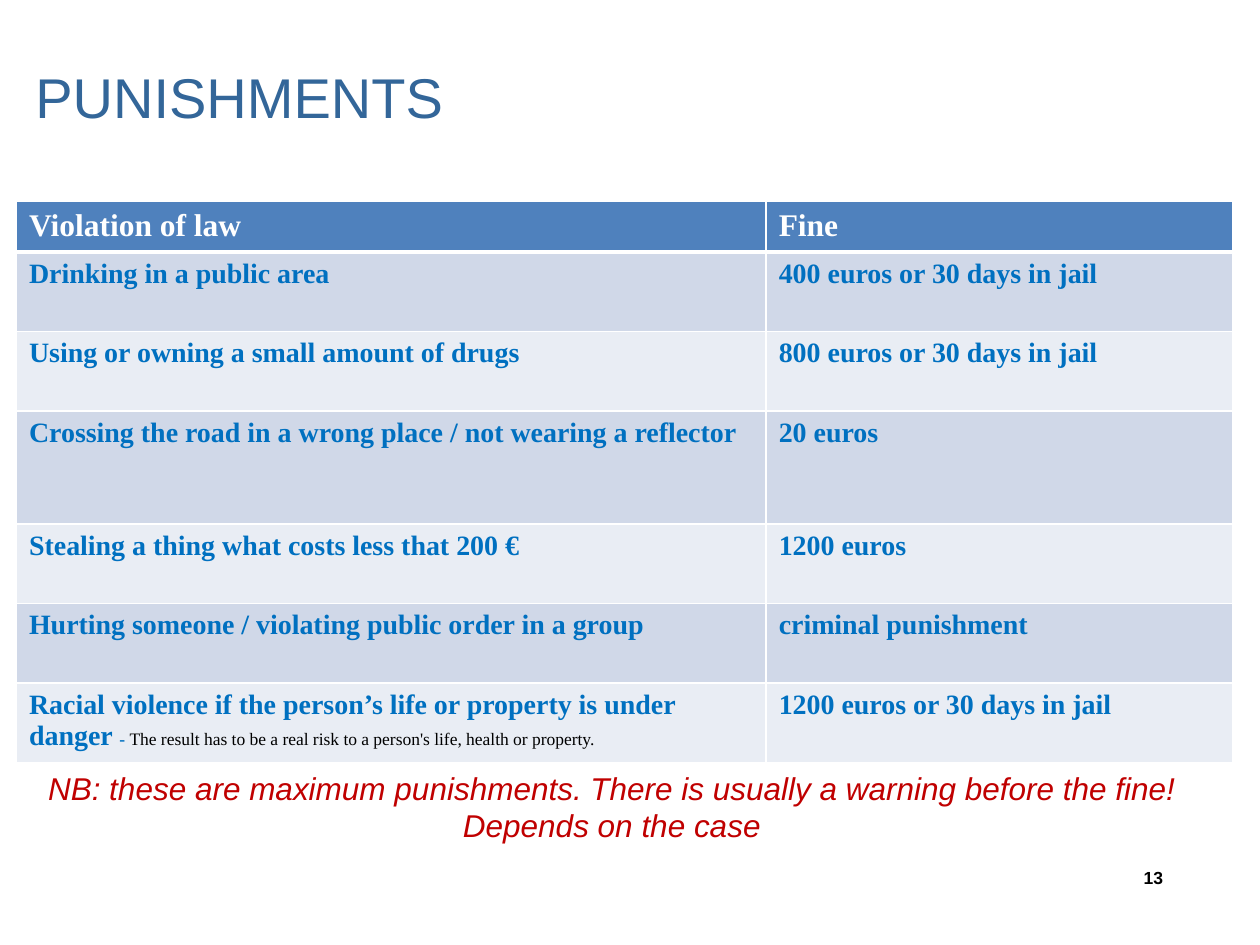
"""Build a slide listing punishments for violations of law."""
from dataclasses import dataclass
from typing import Optional

import pptx
import pptx.dml.color
import pptx.enum.text
import pptx.oxml
import pptx.oxml.ns
import pptx.util

Pt = pptx.util.Pt
ALIGN = pptx.enum.text.PP_ALIGN
ANCHOR = pptx.enum.text.MSO_ANCHOR

WHITE, BLACK, BLUE, RED = "FFFFFF", "000000", "0070C0", "C00000"
TITLE_BLUE, HEADER_FILL = "336699", "4F81BD"
BAND_FILLS = ("D0D8E8", "E9EDF4")
SERIF, SANS = "Times New Roman", "Arial"
COLUMN_WIDTHS = (428.4, 266.4)


@dataclass
class Run:
    text: str
    size: float = 16
    color: str = BLUE
    font: str = SERIF
    bold: bool = True
    italic: bool = False


@dataclass
class Row:
    violation: list[Run]
    fine: list[Run]
    height: float = 45.36


@dataclass
class Box:
    left: float
    top: float
    width: float
    height: float


ROWS = [
    Row([Run("Violation of law", 18, WHITE)], [Run("Fine", 18, WHITE)], 28.8),
    Row([Run("Drinking in a public area")], [Run("400 euros or 30 days in jail")]),
    Row([Run("Using or owning a small amount of drugs")],
        [Run("800 euros or 30 days in jail")]),
    Row([Run("Crossing the road in a wrong place / not wearing a reflector")],
        [Run("20 euros")], 64.8),
    Row([Run("Stealing a thing what costs less that 200 €")], [Run("1200 euros")]),
    Row([Run("Hurting someone / violating public order in a group")],
        [Run("criminal punishment")]),
    Row([Run("Racial violence if the person’s life or property is under danger "),
         Run("- ", 10),
         Run("The result has to be a real risk to a person's life, health or property.",
             10, BLACK, bold=False)],
        [Run("1200 euros or 30 days in jail")]),
]


def rgb(color: str) -> pptx.dml.color.RGBColor:
    return pptx.dml.color.RGBColor.from_string(color)


def write(text_frame, runs: list[Run], alignment: Optional[ALIGN] = ALIGN.LEFT) -> None:
    paragraph = text_frame.paragraphs[0]
    paragraph.alignment = alignment
    for item in runs:
        run = paragraph.add_run()
        run.text = item.text
        run.font.size = Pt(item.size)
        run.font.name = item.font
        run.font.bold = item.bold
        run.font.italic = item.italic
        run.font.color.rgb = rgb(item.color)


def place(shape, box: Box) -> None:
    shape.left, shape.top = Pt(box.left), Pt(box.top)
    shape.width, shape.height = Pt(box.width), Pt(box.height)


def add_text(slide, box: Box, run: Run, alignment: ALIGN) -> None:
    shape = slide.shapes.add_textbox(
        Pt(box.left), Pt(box.top), Pt(box.width), Pt(box.height))
    shape.text_frame.word_wrap = True
    write(shape.text_frame, [run], alignment)


def set_borders(cell, top: float, bottom: float) -> None:
    properties = cell._tc.get_or_add_tcPr()
    for side, width in (("L", 1), ("R", 1), ("T", top), ("B", bottom)):
        properties.append(pptx.oxml.parse_xml(
            f'<a:ln{side} {pptx.oxml.ns.nsdecls("a")} w="{Pt(width)}">'
            f'<a:solidFill><a:srgbClr val="{WHITE}"/></a:solidFill></a:ln{side}>'))


def add_fines_table(slide, box: Box, rows: list[Row]) -> None:
    table = slide.shapes.add_table(
        len(rows), len(COLUMN_WIDTHS),
        Pt(box.left), Pt(box.top), Pt(box.width), Pt(box.height)).table
    for column, width in zip(table.columns, COLUMN_WIDTHS):
        column.width = Pt(width)
    for index, row in enumerate(rows):
        table.rows[index].height = Pt(row.height)
        fill = BAND_FILLS[(index - 1) % 2] if index else HEADER_FILL
        for cell, runs in zip(table.rows[index].cells, (row.violation, row.fine)):
            set_borders(cell, 3 if index == 1 else 1, 3 if index == 0 else 1)
            cell.fill.solid()
            cell.fill.fore_color.rgb = rgb(fill)
            write(cell.text_frame, runs)


def main() -> None:
    presentation = pptx.Presentation()
    presentation.slide_width, presentation.slide_height = Pt(720), Pt(540)
    slide = presentation.slides.add_slide(presentation.slide_layouts[5])

    title = slide.shapes.title
    place(title, Box(13, 28.8, 602, 56.2))
    title.text_frame.vertical_anchor = ANCHOR.TOP
    title.text_frame.margin_top = Pt(7)
    write(title.text_frame, [Run("PUNISHMENTS", 32, TITLE_BLUE, SANS, bold=False)])

    add_text(slide, Box(516.2, 491.8, 155.5, 36),
             Run("13", 10, BLACK, SANS), ALIGN.RIGHT)
    add_fines_table(slide, Box(9.4, 115.2, sum(COLUMN_WIDTHS),
                               sum(row.height for row in ROWS)), ROWS)
    add_text(slide, Box(9.4, 435.6, 680.4, 94.3),
             Run("NB: these are maximum punishments. There is usually a warning "
                 "before the fine! Depends on the case",
                 18, RED, SANS, bold=False, italic=True), ALIGN.CENTER)
    presentation.save("out.pptx")


if __name__ == "__main__":
    main()
